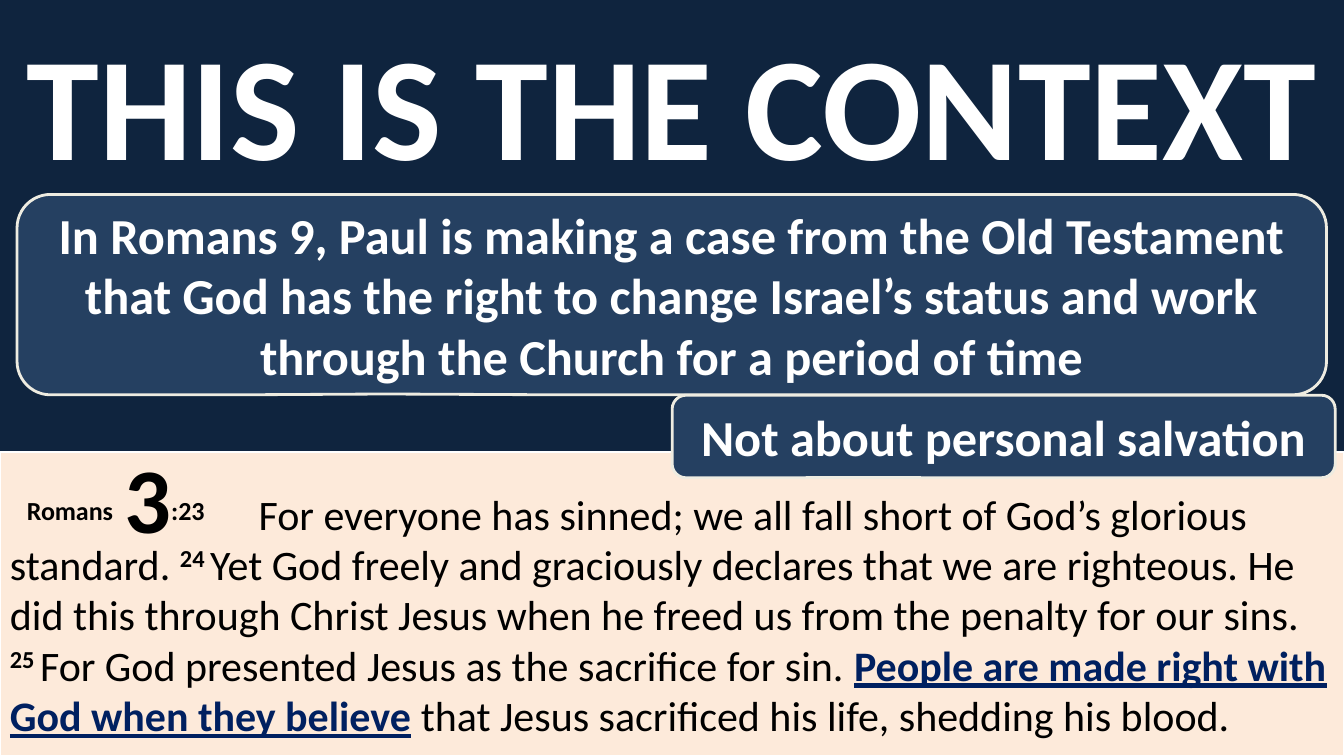
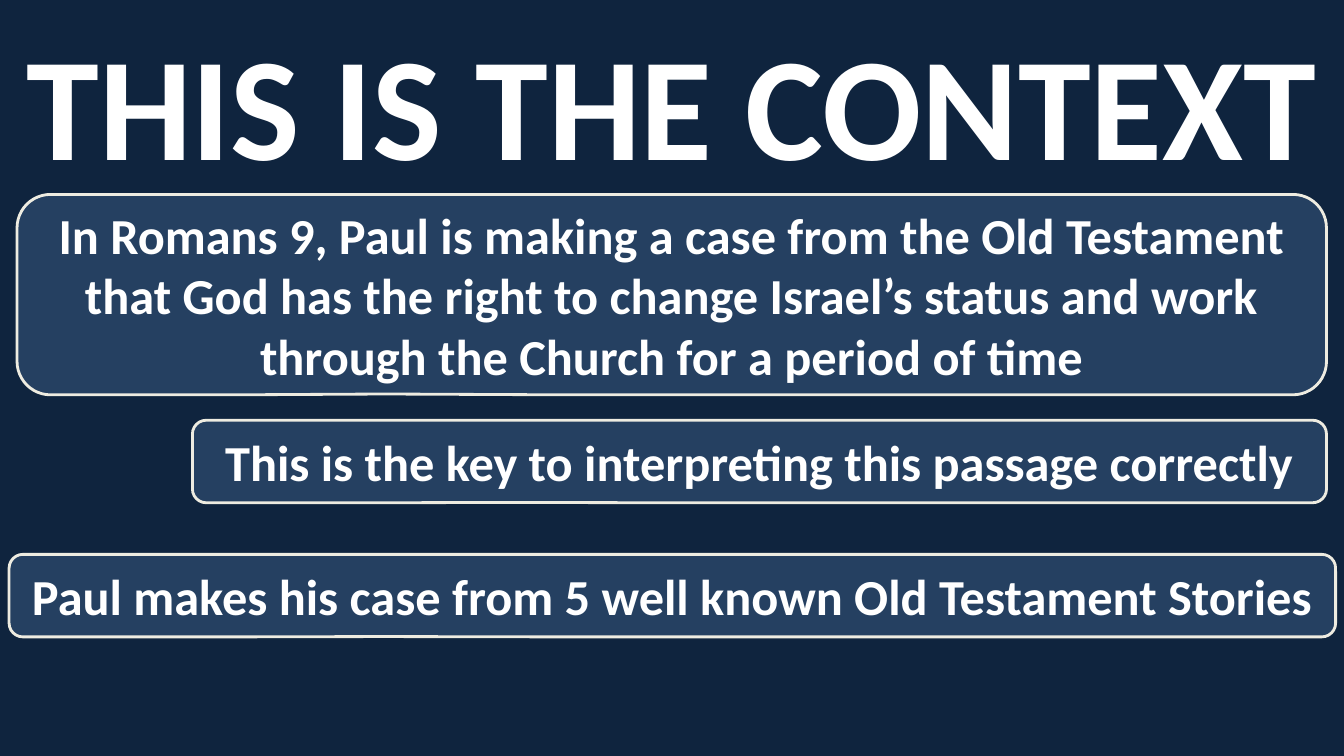
import pptx
import pptx.util
import pptx.dml.color
import pptx.enum.shapes
import pptx.enum.text

Cm = pptx.util.Cm
Pt = pptx.util.Pt
Shape = pptx.enum.shapes.MSO_SHAPE
Anchor = pptx.enum.text.MSO_ANCHOR
Align = pptx.enum.text.PP_ALIGN

WIDTH, HEIGHT = 33.87, 19.05
FONT = "Calibri"
COLORS = {
    "night": "0F243E", "panel": "254061", "outline": "EEECE1", "white": "FFFFFF",
    "parchment": "FDEADA", "ink": "000000", "emphasis": "002060",
}
TAIL = (-0.219, 0.496, 0.167)
SUPERSCRIPT = "30000"

TITLE = "THIS IS THE CONTEXT"
TITLE_AREA = (0, 0.25, WIDTH, 4.65)
CONTEXT = (
    "In Romans 9, Paul is making a case from the Old Testament that God has the right "
    "to change Israel’s status and work through the Church for a period of time",
    (0.43, 4.9, 33, 5.05),
)
VERSE_AREA = (0, 11.4, WIDTH, HEIGHT - 11.4)
VERSE_TOP_INSET = 0.9
VERSE_FIRST_INDENT = 6.27
VERSE = [
    ("For everyone has sinned; we all fall short of God’s glorious standard. ", {}),
    ("24 ", {"bold": True, "raised": True}),
    ("Yet God freely and graciously declares that we are righteous. He did this through "
     "Christ Jesus when he freed us from the penalty for our sins. ", {}),
    ("25 ", {"bold": True, "raised": True}),
    ("For God presented Jesus as the sacrifice for sin. ", {}),
    ("People are made right with God when they believe",
     {"bold": True, "underline": True, "color": "emphasis"}),
    (" that Jesus sacrificed his life, shedding his blood.", {}),
]
REFERENCE_AREA = (0.43, 11, 5.92, 3.2)
REFERENCE = [
    ("Romans", {"size": 32, "bold": True, "raised": True}),
    (" ", {"size": 36, "bold": True}),
    ("3", {"size": 66, "bold": True}),
    (":23", {"size": 32, "bold": True, "raised": True}),
]
SLIDES = [
    {"callouts": [("Not about personal salvation", (16.94, 9.96, 16.71, 2.08))],
     "scripture": True},
    {"callouts": [
        ("This is the key to interpreting this passage correctly", (4.85, 10.59, 28.58, 2.08)),
        ("Paul makes his case from 5 well known Old Testament Stories",
         (0.23, 13.97, 33.43, 2.08))],
     "scripture": False},
]


def rgb(name):
    return pptx.dml.color.RGBColor.from_string(COLORS[name])


def lengths(area):
    return [Cm(value) for value in area]


def write_spans(para, spans):
    for text, style in spans:
        span = para.add_run()
        span.text = text
        span.font.name = FONT
        span.font.size = Pt(style.get("size", 30))
        span.font.bold = style.get("bold", False)
        span.font.underline = style.get("underline", False)
        span.font.color.rgb = rgb(style.get("color", "ink"))
        if style.get("raised"):
            span.font._element.set("baseline", SUPERSCRIPT)


def write_centered(shape, text, size):
    frame = shape.text_frame
    frame.word_wrap = True
    frame.vertical_anchor = Anchor.MIDDLE
    para = frame.paragraphs[0]
    para.alignment = Align.CENTER
    write_spans(para, [(text, {"size": size, "bold": True, "color": "white"})])


def add_panel(page, kind, area, fill, line, line_width):
    panel = page.shapes.add_shape(kind, *lengths(area))
    panel.shadow.inherit = False
    panel.fill.solid()
    panel.fill.fore_color.rgb = rgb(fill)
    panel.line.color.rgb = rgb(line)
    panel.line.width = Pt(line_width)
    return panel


def add_callout(page, text, area):
    callout = add_panel(page, Shape.ROUNDED_RECTANGULAR_CALLOUT, area, "panel", "outline", 2)
    for index, value in enumerate(TAIL):
        callout.adjustments[index] = value
    write_centered(callout, text, 36)


def add_scripture(page):
    verse = add_panel(page, Shape.RECTANGLE, VERSE_AREA, "parchment", "white", 1.5)
    frame = verse.text_frame
    frame.word_wrap = True
    frame.vertical_anchor = Anchor.TOP
    frame.margin_top = Cm(VERSE_TOP_INSET)
    para = frame.paragraphs[0]
    para.alignment = Align.LEFT
    para._p.get_or_add_pPr().set("indent", str(Cm(VERSE_FIRST_INDENT)))
    write_spans(para, VERSE)

    reference = page.shapes.add_textbox(*lengths(REFERENCE_AREA))
    reference.text_frame.word_wrap = True
    write_spans(reference.text_frame.paragraphs[0], REFERENCE)


def add_page(deck, content):
    page = deck.slides.add_slide(deck.slide_layouts[6])
    page.background.fill.solid()
    page.background.fill.fore_color.rgb = rgb("night")
    write_centered(page.shapes.add_textbox(*lengths(TITLE_AREA)), TITLE, 105)
    add_callout(page, *CONTEXT)
    if content["scripture"]:
        add_scripture(page)
    for text, area in content["callouts"]:
        add_callout(page, text, area)


def main():
    deck = pptx.Presentation()
    deck.slide_width, deck.slide_height = Cm(WIDTH), Cm(HEIGHT)
    for content in SLIDES:
        add_page(deck, content)
    deck.save("out.pptx")


if __name__ == "__main__":
    main()
